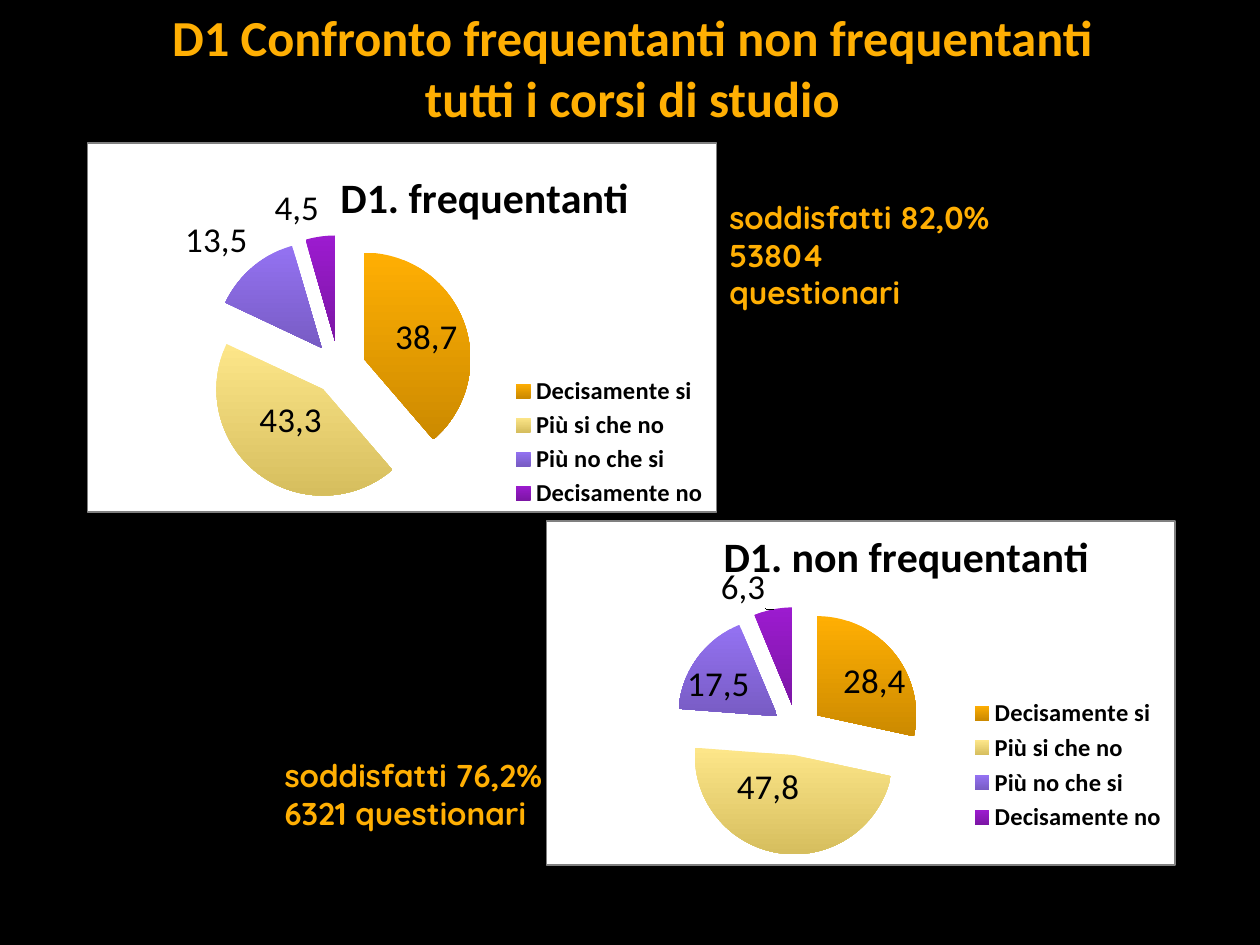
"""Build the slide comparing D1 answers of attending and non-attending students."""
from lxml import etree
from pptx import Presentation
from pptx import util as u
from pptx.chart.data import CategoryChartData
from pptx.dml.color import RGBColor
from pptx.enum import chart as kinds
from pptx.enum import text
from pptx.oxml import parse_xml
from pptx.oxml.ns import nsdecls, qn

BLACK = RGBColor(0, 0, 0)
AMBER = RGBColor(0xFF, 0xAF, 0x03)
SLICES = [
    (AMBER, RGBColor(0xCC, 0x8A, 0x00)),
    (RGBColor(0xFD, 0xE6, 0x89), RGBColor(0xD6, 0xBE, 0x5E)),
    (RGBColor(0x94, 0x72, 0xF2), RGBColor(0x78, 0x5C, 0xC4)),
    (RGBColor(0x9C, 0x1B, 0xCF), RGBColor(0x7C, 0x16, 0xA5)),
]
ANSWERS = ["Decisamente si", "Più si che no", "Più no che si", "Decisamente no"]
CHARTS = [
    ("Series 1", "D1. frequentanti", (0.387, 0.433, 0.135, 0.045),
     (0.69, 1.13, 5, 2.94), (0.39, 0.05), (0.67, 0.62, 0.32, 0.38), 2,
     [(0.02, -0.01), (0, -0.03), (0, 0), (0, 0)]),
    ("D1. non frequentanti", "D1. non frequentanti", (0.284, 0.478, 0.175, 0.063),
     (4.33, 4.13, 5, 2.74), (0.27, 0), (0.67, 0.5, 0.32, 0.42), 3,
     [(0.03, -0.01), (-0.03, -0.05), (-0.03, -0.01), (-0.01, 0.02)]),
]
TEXTS = [
    (["D1 Confronto frequentanti non frequentanti\vtutti i corsi di studio"],
     (0.69, 0, 8.66, 0.86), "Calibri", 28.8, text.PP_ALIGN.CENTER, True),
    (["soddisfatti 82,0%", "53804 questionari"],
     (5.69, 1.52, 2.33, 0.71), "Quicksand", 18, text.PP_ALIGN.LEFT, True),
    (["soddisfatti 76,2%", "6321 questionari"],
     (2.16, 5.95, 2.25, 0.71), "Quicksand", 18, text.PP_ALIGN.LEFT, False),
]


def set_font(font, size, bold, color, name="Calibri"):
    font.name = name
    font.size = u.Pt(size)
    font.bold = bold
    font.color.rgb = color


def set_layout(parent, index, values, target=None, mode="edge"):
    for old in parent.findall(qn("c:layout")):
        parent.remove(old)
    layout = parse_xml(f"<c:layout {nsdecls('c')}><c:manualLayout/></c:layout>")
    settings = [("layoutTarget", target)] if target else []
    settings += [("xMode", mode), ("yMode", mode)]
    settings += zip("xywh", values)
    for tag, value in settings:
        etree.SubElement(layout[0], qn(f"c:{tag}")).set("val", str(value))
    parent.insert(index, layout)


deck = Presentation()
deck.slide_width, deck.slide_height = u.Inches(10), u.Inches(7.5)
page = deck.slides.add_slide(deck.slide_layouts[6])
page.background.fill.solid()
page.background.fill.fore_color.rgb = BLACK

for lines, place, font_name, size, align, wrap in TEXTS:
    box = page.shapes.add_textbox(*map(u.Inches, place))
    frame = box.text_frame
    frame.word_wrap = wrap
    frame.text = "\n".join(lines)
    for para in frame.paragraphs:
        para.alignment = align
        for span in para.runs:
            set_font(span.font, size, True, AMBER, font_name)

for name, heading, values, place, title_at, legend_at, inside, shifts in CHARTS:
    data = CategoryChartData(number_format="####.0%")
    data.categories = ANSWERS
    data.add_series(name, values)
    chart = page.shapes.add_chart(
        kinds.XL_CHART_TYPE.PIE, *map(u.Inches, place), data).chart
    set_font(chart.font, 18, True, BLACK)
    chart._chartSpace.find(qn("c:chart")).addnext(parse_xml(
        f"<c:spPr {nsdecls('c', 'a')}>"
        '<a:solidFill><a:srgbClr val="FFFFFF"/></a:solidFill>'
        '<a:ln w="9525"><a:solidFill><a:srgbClr val="808080"/></a:solidFill></a:ln>'
        "</c:spPr>"))

    chart.has_title = True
    title = chart.chart_title
    title.text_frame.text = heading
    set_font(title.text_frame.paragraphs[0].runs[0].font, 24, True, BLACK)
    set_layout(title._element, 1, title_at)

    chart.has_legend = True
    legend = chart.legend
    legend.position = kinds.XL_LEGEND_POSITION.RIGHT
    legend.include_in_layout = False
    set_font(legend.font, 14, True, BLACK)
    set_layout(legend._element, 1, legend_at)

    plot = chart.plots[0]
    plot.vary_by_categories = True
    set_layout(chart._chartSpace.find(".//" + qn("c:plotArea")), 0,
               (0.08, 0.25, 0.64, 0.72), "inner")
    series = plot.series[0]
    series._element.find(qn("c:tx")).addnext(
        parse_xml(f'<c:explosion {nsdecls("c")} val="25"/>'))
    labels = series.data_labels
    labels.show_value = True
    labels.number_format = "####.0%"
    labels.number_format_is_linked = False
    set_font(labels.font, 20, False, BLACK)

    for index, (value, colors, shift) in enumerate(zip(values, SLICES, shifts)):
        point = series.points[index]
        fill = point.format.fill
        fill.gradient()
        fill.gradient_angle = 270
        for stop, color, offset in zip(fill.gradient_stops, colors, (0, 1)):
            stop.color.rgb = color
            stop.position = offset
        point.format.line.fill.background()
        label = point.data_label
        label.text_frame.text = f"{value * 100:.1f}".replace(".", ",")
        set_font(label.text_frame.paragraphs[0].runs[0].font, 20, False, BLACK)
        spots = kinds.XL_LABEL_POSITION
        label.position = spots.CENTER if index < inside else spots.OUTSIDE_END
        if any(shift):
            set_layout(label._dLbl, 1, shift, mode="factor")

deck.save("out.pptx")
